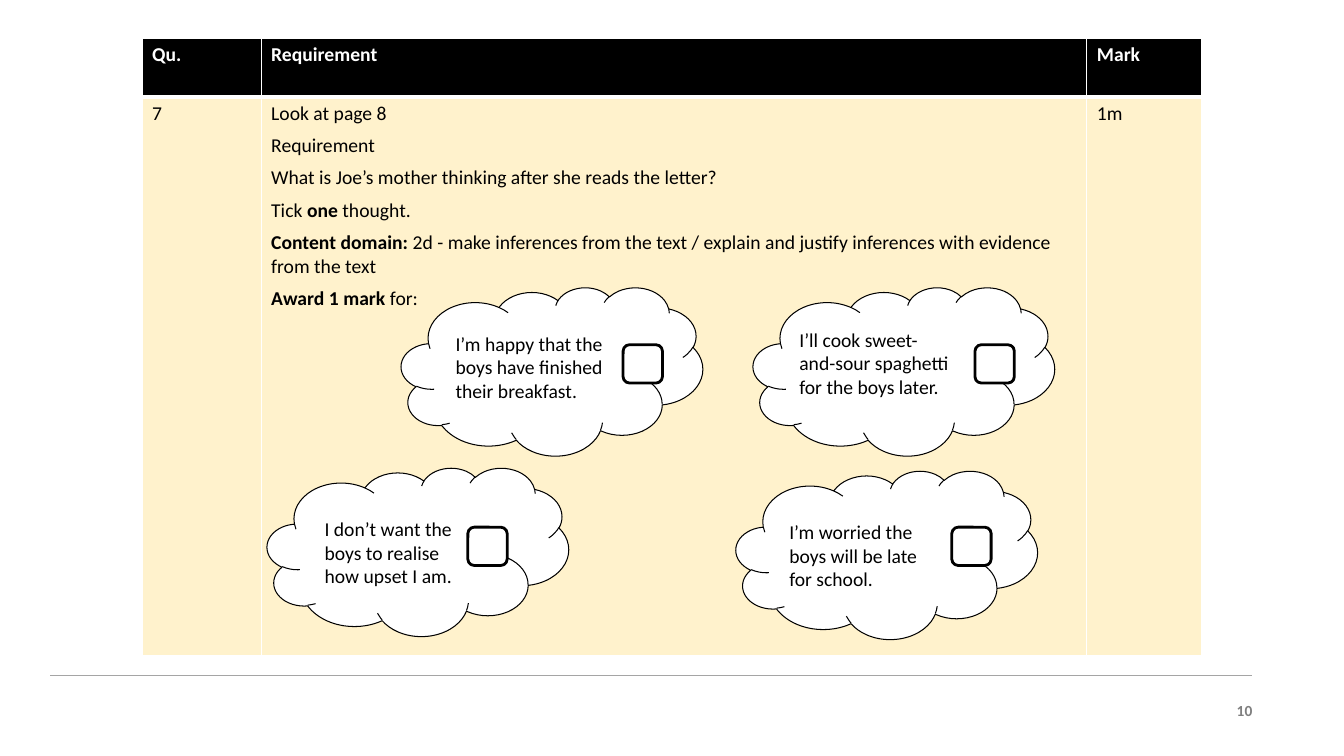
from dataclasses import dataclass

import lxml.etree
import pptx
import pptx.dml.color
import pptx.enum.shapes
import pptx.enum.text
import pptx.oxml.ns
import pptx.util

EMU_PER_PX = 9144  # 100 px to the inch


@dataclass(frozen=True)
class Theme:
    font: str = "Calibri"
    body_size: int = 14
    number_size: int = 11
    paragraph_gap: int = 6
    ink: str = "000000"
    paper: str = "FFFFFF"
    answer_fill: str = "FFF2CC"
    rule: str = "A5A5A5"
    number: str = "7F7F7F"


THEME = Theme()

COLUMN_WIDTHS = (118, 819, 114)
ROW_HEIGHTS = (58, 554)
HEADINGS = ("Qu.", "Requirement", "Mark")
# Each cell is a list of paragraphs; each paragraph alternates plain and bold text.
ANSWER_ROW = (
    [("7",)],
    [
        ("Look at page 8",),
        ("Requirement",),
        ("What is Joe’s mother thinking after she reads the letter?",),
        ("Tick ", "one", " thought."),
        ("", "Content domain: ", "2d - make inferences from the text / explain and "
         "justify inferences with evidence from the text"),
        ("", "Award 1 mark ", "for:"),
    ],
    [("1m",)],
)

# Cloud corner, text corner and width, tick box corner, thought.
THOUGHTS = (
    ((747, 285), (783, 320, 170), (967, 342),
     "I’ll cook sweet-and-sour spaghetti for the boys later."),
    ((730, 467), (773, 511, 171), (944, 523),
     "I’m worried the boys will be late for school."),
    ((265, 464), (312, 508, 172), (464, 523),
     "I don’t want the boys to realise how upset I am."),
    ((398, 285), (442, 324, 186), (618, 342),
     "I’m happy that the boys have finished their breakfast."),
)
CLOUD_SIZE = (299, 167)
TICK_SIZE = (39, 38)
THOUGHT_HEIGHT = 81


def px(length):
    return pptx.util.Emu(length * EMU_PER_PX)


def rgb(value):
    return pptx.dml.color.RGBColor.from_string(value)


def style_font(font, color, size=THEME.body_size, bold=False):
    font.name = THEME.font
    font.size = pptx.util.Pt(size)
    font.bold = bold
    font.color.rgb = rgb(color)


def fill_solid(fill, color):
    fill.solid()
    fill.fore_color.rgb = rgb(color)


def border_cell(cell, bottom_width):
    """Draw white borders, with the bottom one as wide as given in points."""
    properties = cell._tc.get_or_add_tcPr()
    widths = {"lnL": 1, "lnR": 1, "lnT": 1, "lnB": bottom_width}
    for position, (side, width) in enumerate(widths.items()):
        border = lxml.etree.Element(pptx.oxml.ns.qn(f"a:{side}"),
                                    w=str(pptx.util.Pt(width)))
        solid = lxml.etree.SubElement(border, pptx.oxml.ns.qn("a:solidFill"))
        lxml.etree.SubElement(solid, pptx.oxml.ns.qn("a:srgbClr"), val=THEME.paper)
        properties.insert(position, border)


def write_answer(cell, paragraphs):
    frame = cell.text_frame
    for index, parts in enumerate(paragraphs):
        paragraph = frame.add_paragraph() if index else frame.paragraphs[0]
        if index:
            paragraph.space_before = pptx.util.Pt(THEME.paragraph_gap)
        for part_index, part in enumerate(parts):
            if part:
                run = paragraph.add_run()
                run.text = part
                style_font(run.font, THEME.ink, bold=part_index % 2 == 1)


def add_mark_table(slide):
    table = slide.shapes.add_table(2, 3, px(141), px(38), px(sum(COLUMN_WIDTHS)),
                                   px(sum(ROW_HEIGHTS))).table
    for column, width in zip(table.columns, COLUMN_WIDTHS):
        column.width = px(width)
    for row, height in zip(table.rows, ROW_HEIGHTS):
        row.height = px(height)
    for column, (heading, answer) in enumerate(zip(HEADINGS, ANSWER_ROW)):
        header_cell, answer_cell = table.cell(0, column), table.cell(1, column)
        header_cell.text_frame.text = heading
        style_font(header_cell.text_frame.paragraphs[0].runs[0].font,
                   THEME.paper, bold=True)
        fill_solid(header_cell.fill, THEME.ink)
        border_cell(header_cell, 3)
        write_answer(answer_cell, answer)
        fill_solid(answer_cell.fill, THEME.answer_fill)
        border_cell(answer_cell, 1)


def add_outline(slide, kind, corner, size, line_width):
    outline = slide.shapes.add_shape(kind, *map(px, corner + size))
    outline.shadow.inherit = False
    fill_solid(outline.fill, THEME.paper)
    outline.line.color.rgb = rgb(THEME.ink)
    outline.line.width = pptx.util.Pt(line_width)


def add_text(slide, box, text, color, wrap=True, **font_options):
    frame = slide.shapes.add_textbox(*map(px, box)).text_frame
    frame.word_wrap = wrap
    frame.text = text
    style_font(frame.paragraphs[0].runs[0].font, color, **font_options)
    return frame.paragraphs[0]


def add_thoughts(slide):
    kinds = pptx.enum.shapes.MSO_SHAPE
    for cloud, _, _, _ in THOUGHTS:
        add_outline(slide, kinds.CLOUD, cloud, CLOUD_SIZE, 0.75)
    for _, _, tick, _ in THOUGHTS:
        add_outline(slide, kinds.ROUNDED_RECTANGLE, tick, TICK_SIZE, 2)
    for _, place, _, thought in THOUGHTS:
        add_text(slide, place + (THOUGHT_HEIGHT,), thought, THEME.ink)


def add_footer(slide):
    rule = slide.shapes.add_connector(pptx.enum.shapes.MSO_CONNECTOR.STRAIGHT,
                                      px(50), px(670), px(1242), px(670))
    rule.line.color.rgb = rgb(THEME.rule)
    rule.line.width = pptx.util.Pt(0.75)
    lxml.etree.SubElement(rule._element.spPr, pptx.oxml.ns.qn("a:effectLst"))
    number = add_text(slide, (1214, 691, 38, 29), "10", THEME.number, wrap=False,
                      size=THEME.number_size, bold=True)
    number.alignment = pptx.enum.text.PP_ALIGN.RIGHT


def main():
    deck = pptx.Presentation()
    deck.slide_width, deck.slide_height = px(1333), px(750)
    slide = deck.slides.add_slide(deck.slide_layouts[6])
    add_footer(slide)
    add_mark_table(slide)
    add_thoughts(slide)
    deck.save("out.pptx")


if __name__ == "__main__":
    main()
